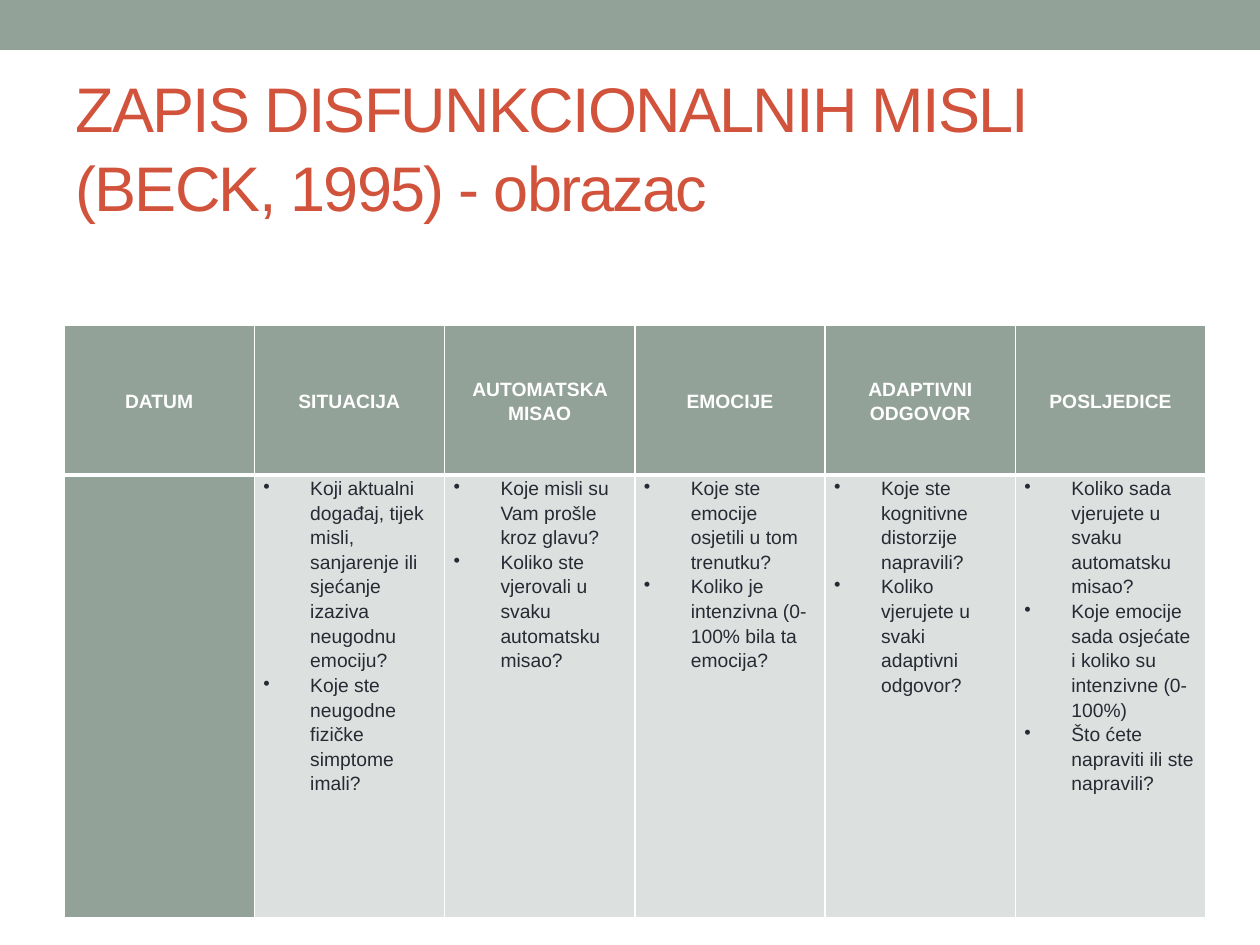
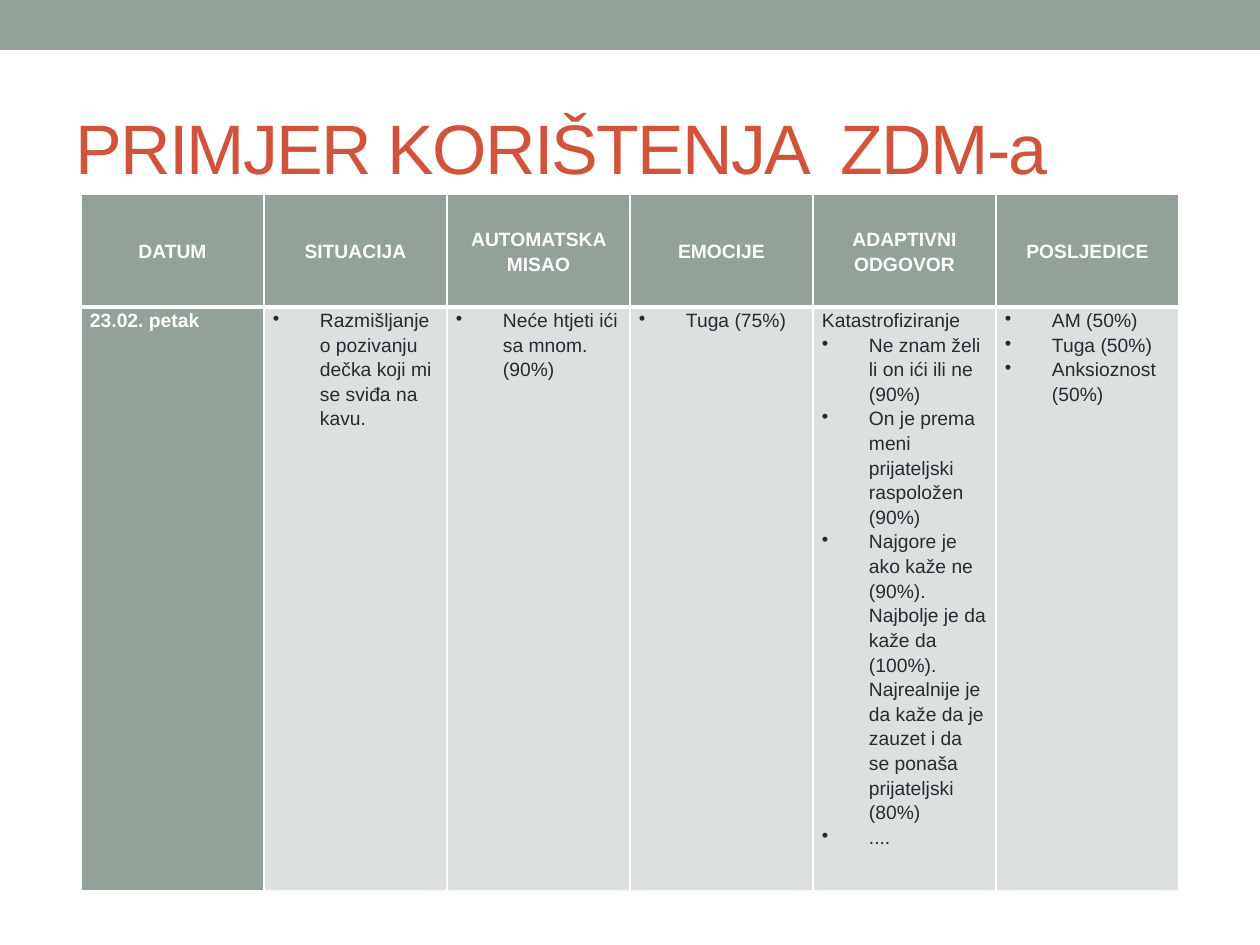
import pptx
import pptx.util
import pptx.dml.color
import pptx.enum.shapes
import pptx.enum.text
import lxml.etree

RGBColor = pptx.dml.color.RGBColor
SAGE = RGBColor(0x93, 0xA2, 0x99)
PALE = RGBColor(0xDC, 0xE0, 0xDE)
RUST = RGBColor(0xD2, 0x53, 0x3C)
INK = RGBColor(0x29, 0x29, 0x34)
WHITE = RGBColor(0xFF, 0xFF, 0xFF)
ALIGN = pptx.enum.text.PP_ALIGN
MIDDLE = pptx.enum.text.MSO_ANCHOR.MIDDLE
EMU_PER_PX = 914400 / 126
DRAWING = "{http://schemas.openxmlformats.org/drawingml/2006/main}"

HEADINGS = ["DATUM", "SITUACIJA", "AUTOMATSKA MISAO", "EMOCIJE", "ADAPTIVNI ODGOVOR", "POSLJEDICE"]

RECORDS = [
    {
        "title": "ZAPIS DISFUNKCIONALNIH MISLI (BECK, 1995) - obrazac",
        "title_size": 36,
        "place": (64, 325, 1142),
        "row_heights": (150, 443),
        "date": "",
        "intro": {},
        "answers": [
            ["Koji aktualni događaj, tijek misli, sanjarenje ili sjećanje izaziva neugodnu emociju?",
             "Koje ste neugodne fizičke simptome imali?"],
            ["Koje misli su Vam prošle kroz glavu?",
             "Koliko ste vjerovali u svaku automatsku misao?"],
            ["Koje ste emocije osjetili u tom trenutku?",
             "Koliko je intenzivna (0-100% bila ta emocija?"],
            ["Koje ste kognitivne distorzije napravili?",
             "Koliko vjerujete u svaki adaptivni odgovor?"],
            ["Koliko sada vjerujete u svaku automatsku misao?",
             "Koje emocije sada osjećate i koliko su intenzivne (0-100%)",
             "Što ćete napraviti ili ste napravili?"],
        ],
    },
    {
        "title": "PRIMJER KORIŠTENJA  ZDM-a",
        "title_size": 40,
        "place": (81, 194, 1098),
        "row_heights": (113, 566),
        "date": "23.02. petak",
        "intro": {"ADAPTIVNI ODGOVOR": "Katastrofiziranje"},
        "answers": [
            ["Razmišljanje o pozivanju dečka koji mi se sviđa na kavu."],
            ["Neće htjeti ići sa mnom.(90%)"],
            ["Tuga (75%)"],
            ["Ne znam želi li on ići ili ne (90%)",
             "On je prema meni prijateljski raspoložen (90%)",
             "Najgore je ako kaže ne (90%). Najbolje je da kaže da (100%). "
             "Najrealnije je da kaže da je zauzet i da se ponaša prijateljski (80%)",
             "...."],
            ["AM (50%)", "Tuga (50%)", "Anksioznost (50%)"],
        ],
    },
]


def px(count):
    return pptx.util.Emu(round(count * EMU_PER_PX))


def write(frame, text, size=11, color=INK, bold=False, align=ALIGN.LEFT,
          line_spacing=1.15, tracking=0, bullet=False):
    paragraph = frame.paragraphs[0] if not frame.text else frame.add_paragraph()
    paragraph.alignment = align
    paragraph.line_spacing = line_spacing
    if bullet:
        properties = paragraph._p.get_or_add_pPr()
        properties.set("marL", str(px(47)))
        properties.set("indent", str(-px(47)))
        lxml.etree.SubElement(properties, DRAWING + "buChar", char="•")
    run = paragraph.add_run()
    run.text = text
    run.font.name = "Arial"
    run.font.size = pptx.util.Pt(size)
    run.font.bold = bold
    run.font.color.rgb = color
    if tracking:
        run._r.get_or_add_rPr().set("spc", str(tracking * 100))


presentation = pptx.Presentation()
presentation.slide_width = px(1260)
presentation.slide_height = px(945)

for record in RECORDS:
    slide = presentation.slides.add_slide(presentation.slide_layouts[6])

    band = slide.shapes.add_shape(pptx.enum.shapes.MSO_SHAPE.RECTANGLE, 0, 0, px(1260), px(50))
    band.shadow.inherit = False
    band.fill.solid()
    band.fill.fore_color.rgb = SAGE
    band.line.fill.background()

    title = slide.shapes.add_textbox(px(63), px(73), px(1134), px(136)).text_frame
    title.word_wrap = True
    title.vertical_anchor = MIDDLE
    title.margin_top = px(14)
    write(title, record["title"], size=record["title_size"], color=RUST, line_spacing=1.05, tracking=-1)

    left, top, width = record["place"]
    heights = record["row_heights"]
    thought_log = slide.shapes.add_table(
        2, len(HEADINGS), px(left), px(top), px(width), px(sum(heights))).table
    for row, height in zip(thought_log.rows, heights):
        row.height = px(height)

    for column, heading in enumerate(HEADINGS):
        for row in range(2):
            cell = thought_log.cell(row, column)
            cell.margin_left = cell.margin_right = px(9)
            cell.margin_top = cell.margin_bottom = 0
            divider = "lnT" if row else "lnB"
            for side in ("lnL", "lnR", "lnT", "lnB"):
                weight = 3 if side == divider else 1
                border = lxml.etree.SubElement(
                    cell._tc.get_or_add_tcPr(), DRAWING + side, w=str(pptx.util.Pt(weight)))
                border_fill = lxml.etree.SubElement(border, DRAWING + "solidFill")
                lxml.etree.SubElement(border_fill, DRAWING + "srgbClr", val=str(WHITE))
            cell.fill.solid()
            cell.fill.fore_color.rgb = PALE if row and column else SAGE

        heading_cell = thought_log.cell(0, column)
        heading_cell.vertical_anchor = MIDDLE
        write(heading_cell.text_frame, heading, color=WHITE, bold=True, align=ALIGN.CENTER)

        entry = thought_log.cell(1, column).text_frame
        if column == 0:
            if record["date"]:
                write(entry, record["date"], color=WHITE, bold=True)
            continue
        if heading in record["intro"]:
            write(entry, record["intro"][heading])
        for answer in record["answers"][column - 1]:
            write(entry, answer, bullet=True)

presentation.save("out.pptx")
